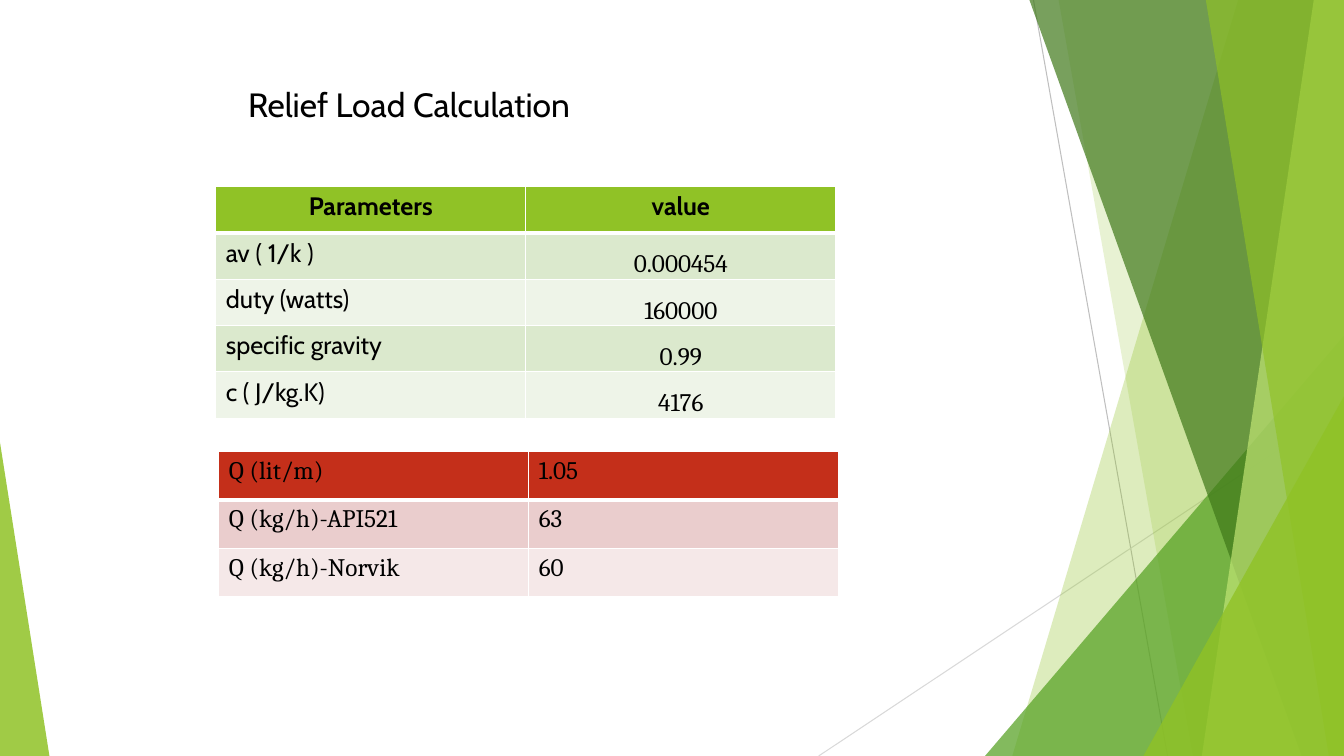
from lxml.etree import SubElement
from pptx import Presentation
from pptx.dml.color import RGBColor
from pptx.enum.shapes import MSO_CONNECTOR, MSO_SHAPE
from pptx.enum.text import MSO_ANCHOR, PP_ALIGN
from pptx.oxml.ns import qn
from pptx.util import Inches, Pt

COLORS = {
    "black": "000000", "white": "FFFFFF", "gray": "BFBFBF", "light_gray": "D9D9D9",
    "lime": "90C226", "green": "54A021", "dark_green": "3F7819", "pale_lime": "C0E474",
    "green_band": "DBE9CD", "green_tint": "EEF4E8",
    "red": "C42F1A", "red_band": "EACDCD", "red_tint": "F5E8E8",
}
WIDTH, HEIGHT = 13.33, 7.5
PARAMETERS = [
    ("Parameters", "value"),
    ("av ( 1/k )", "0.000454"),
    ("duty (watts)", "160000"),
    ("specific gravity", "0.99"),
    ("c ( J/kg.K)", "4176"),
]
RELIEF_LOADS = [
    ("Q (lit/m)", "1.05"),
    ("Q (kg/h)-API521", "63"),
    ("Q (kg/h)-Norvik", "60"),
]


def rgb(name):
    """Return the named colour."""
    return RGBColor.from_string(COLORS[name])


def write_text(frame, text, font="Cabin", size=18, bold=False, align=PP_ALIGN.LEFT):
    """Write one formatted paragraph into a text frame."""
    paragraph = frame.paragraphs[0]
    paragraph.alignment = align
    run = paragraph.add_run()
    run.text = text
    run.font.name, run.font.size, run.font.bold = font, Pt(size), bold
    run.font.color.rgb = rgb("black")


def paint(shape, color, opacity):
    """Give a shape a translucent fill with no line or shadow."""
    shape.shadow.inherit = False
    shape.line.fill.background()
    shape.fill.solid()
    shape.fill.fore_color.rgb = rgb(color)
    fill_color = shape._element.spPr.find(qn("a:solidFill")).find(qn("a:srgbClr"))
    SubElement(fill_color, qn("a:alpha"), val=str(opacity * 1000))


def add_line(slide, start, end, color):
    """Draw a thin straight line."""
    points = [Inches(value) for value in (*start, *end)]
    line = slide.shapes.add_connector(MSO_CONNECTOR.STRAIGHT, *points)
    line.line.color.rgb = rgb(color)
    line.line.width = Pt(0.75)
    SubElement(line._element.spPr, qn("a:effectLst"))


def add_facet(slide, top_left, bottom_left, color, opacity):
    """Draw a full-height facet that reaches the right edge."""
    corners = [(top_left, 0), (WIDTH, 0), (WIDTH, HEIGHT), (bottom_left, HEIGHT)]
    points = [(Inches(x), Inches(y)) for x, y in corners]
    builder = slide.shapes.build_freeform(*points[0], scale=1.0)
    builder.add_line_segments(points[1:], close=True)
    paint(builder.convert_to_shape(), color, opacity)


def add_triangle(slide, left, top, width, apex, color, opacity):
    """Draw a triangle standing on the bottom edge."""
    box = [Inches(value) for value in (left, top, width, HEIGHT - top)]
    triangle = slide.shapes.add_shape(MSO_SHAPE.ISOSCELES_TRIANGLE, *box)
    triangle.adjustments[0] = apex
    paint(triangle, color, opacity)


def add_backdrop(slide):
    """Draw the faceted decoration from back to front."""
    add_line(slide, (10.25, 0), (11.58, HEIGHT), "gray")
    add_line(slide, (WIDTH, 4.03), (8.12, HEIGHT), "light_gray")
    add_facet(slide, 12.28, 10.04, "lime", 30)
    add_facet(slide, 10.5, 11.83, "lime", 20)
    add_triangle(slide, 9.77, 3.33, 3.56, 1, "green", 72)
    add_facet(slide, 10.21, 12.91, "dark_green", 70)
    add_facet(slide, 13.03, 11.92, "pale_lime", 70)
    add_facet(slide, 11.96, 13.18, "lime", 65)
    add_triangle(slide, 11.34, 3.93, 1.99, 1, "lime", 80)
    add_triangle(slide, 0, 4.39, 0.49, 0, "lime", 85)


def style_cell(cell, color, bottom_width):
    """Set white borders and a solid fill on a cell."""
    properties = cell._tc.get_or_add_tcPr()
    for side, width in (("L", 1), ("R", 1), ("T", 1), ("B", bottom_width)):
        border = SubElement(properties, qn(f"a:ln{side}"), w=str(Pt(width)))
        fill = SubElement(border, qn("a:solidFill"))
        SubElement(fill, qn("a:srgbClr"), val=COLORS["white"])
    cell.fill.solid()
    cell.fill.fore_color.rgb = rgb(color)


def add_banded_table(slide, rows, left, top, row_height, colors):
    """Add a two-column table with a header colour and two bands, and return it."""
    box = [Inches(value) for value in (left, top, 6.15, row_height * len(rows))]
    table = slide.shapes.add_table(len(rows), 2, *box).table
    for index, row in enumerate(table.rows):
        row.height = Inches(row_height)
        color = colors[0] if index == 0 else colors[2 - index % 2]
        for cell in row.cells:
            style_cell(cell, color, 3 if index == 0 else 1)
    return table


def add_parameters(slide):
    """Add the green table of input parameters."""
    colors = ("lime", "green_tint", "green_band")
    table = add_banded_table(slide, PARAMETERS, 2.14, 1.85, 0.46,
                             ("lime", "green_band", "green_tint"))
    for index, (name, value) in enumerate(PARAMETERS):
        name_cell, value_cell = table.rows[index].cells
        header = index == 0
        write_text(name_cell.text_frame, name, bold=header,
                   align=PP_ALIGN.CENTER if header else PP_ALIGN.LEFT)
        write_text(value_cell.text_frame, value, font="Cabin" if header else "Cambria",
                   bold=header, align=PP_ALIGN.CENTER)
        if not header:
            value_cell.vertical_anchor = MSO_ANCHOR.BOTTOM
            value_cell.margin_left = value_cell.margin_right = Inches(0.01)
            value_cell.margin_top, value_cell.margin_bottom = Inches(0.01), 0


def add_relief_loads(slide):
    """Add the red table of resulting loads."""
    table = add_banded_table(slide, RELIEF_LOADS, 2.17, 4.48, 0.48,
                             ("red", "red_band", "red_tint"))
    for row, texts in zip(table.rows, RELIEF_LOADS):
        for cell, text in zip(row.cells, texts):
            write_text(cell.text_frame, text, font="Cambria")


def add_title(slide):
    """Place and format the slide title."""
    title = slide.shapes.title
    title.left, title.top = Inches(2.36), Inches(0.73)
    title.width, title.height = Inches(6), Inches(0.6)
    title.text_frame.vertical_anchor = MSO_ANCHOR.MIDDLE
    write_text(title.text_frame, "Relief Load Calculation", size=24)


def main():
    """Build and save the relief load slide."""
    presentation = Presentation()
    presentation.slide_width, presentation.slide_height = Inches(WIDTH), Inches(HEIGHT)
    slide = presentation.slides.add_slide(presentation.slide_layouts[5])
    add_backdrop(slide)
    add_title(slide)
    add_parameters(slide)
    add_relief_loads(slide)
    presentation.save("out.pptx")


if __name__ == "__main__":
    main()
